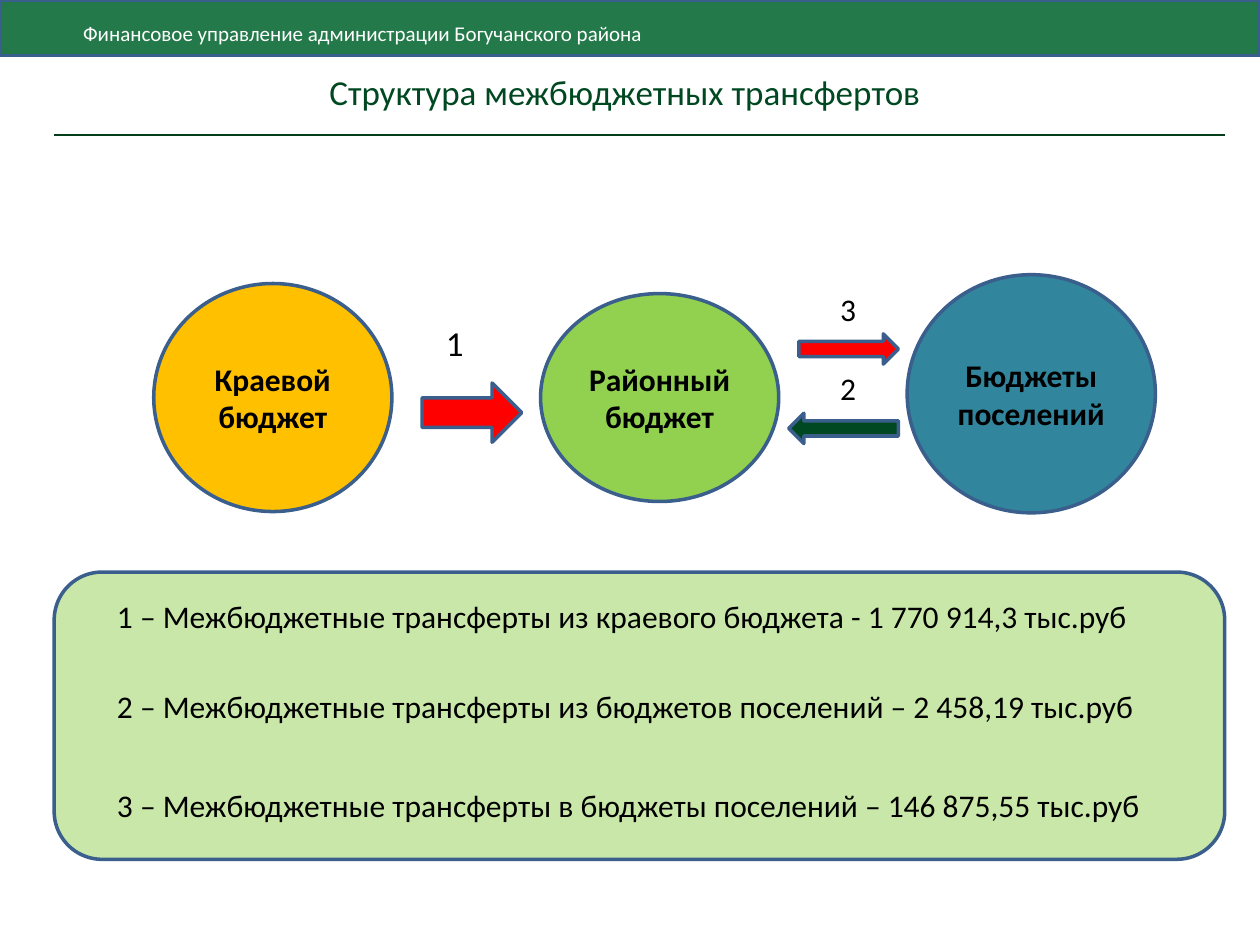
"""Build the slide on the structure of inter-budget transfers."""
from dataclasses import dataclass

import lxml.etree
import pptx
import pptx.dml.color
import pptx.enum.shapes
import pptx.enum.text
import pptx.oxml.ns
import pptx.util

Inches = pptx.util.Inches
Shape = pptx.enum.shapes.MSO_SHAPE
Align = pptx.enum.text.PP_ALIGN
Anchor = pptx.enum.text.MSO_ANCHOR


@dataclass(frozen=True)
class Theme:
    font: str = "Calibri"
    band: str = "00642D"
    outline: str = "3A5F8C"
    rule: str = "003E1C"
    dark_green: str = "004821"
    white: str = "FFFFFF"
    black: str = "000000"
    yellow: str = "FFC000"
    green: str = "92D050"
    teal: str = "31859C"
    red: str = "FF0000"
    header_size: int = 12
    body_size: int = 18
    title_size: int = 20
    outline_width: float = 2
    rule_width: float = 1.25


class SlideBuilder:
    def __init__(self, slide, theme):
        self.slide = slide
        self.theme = theme

    def color(self, value):
        return pptx.dml.color.RGBColor.from_string(value)

    def set_text(self, shape, text, size, color, align=Align.LEFT, bold=False):
        frame = shape.text_frame
        frame.word_wrap = True
        paragraph = frame.paragraphs[0]
        paragraph.text = text
        paragraph.alignment = align
        font = paragraph.font
        font.name = self.theme.font
        font.size = pptx.util.Pt(size)
        font.bold = bold
        font.color.rgb = self.color(color)

    def shape(self, kind, left, top, width, height, fill, opacity=100):
        shape = self.slide.shapes.add_shape(
            kind, Inches(left), Inches(top), Inches(width), Inches(height))
        shape.shadow.inherit = False
        shape.fill.solid()
        shape.fill.fore_color.rgb = self.color(fill)
        shape.line.color.rgb = self.color(self.theme.outline)
        shape.line.width = pptx.util.Pt(self.theme.outline_width)
        if opacity < 100:
            solid_fill = shape._element.spPr.find(pptx.oxml.ns.qn("a:solidFill"))
            alpha = lxml.etree.SubElement(solid_fill[0], pptx.oxml.ns.qn("a:alpha"))
            alpha.set("val", str(opacity * 1000))
        return shape

    def header(self, text):
        band = self.shape(Shape.RECTANGLE, 0, 0, 10, 0.44, self.theme.band, 86)
        self.set_text(band, text, self.theme.header_size, self.theme.white)
        frame = band.text_frame
        frame.vertical_anchor = Anchor.MIDDLE
        frame.margin_left = Inches(0.66)
        frame.margin_top = Inches(0.13)

    def rule(self, left, right, top):
        line = self.slide.shapes.add_connector(
            pptx.enum.shapes.MSO_CONNECTOR.STRAIGHT,
            Inches(left), Inches(top), Inches(right), Inches(top))
        line.line.color.rgb = self.color(self.theme.rule)
        line.line.width = pptx.util.Pt(self.theme.rule_width)
        properties = line._element.spPr
        lxml.etree.SubElement(properties, pptx.oxml.ns.qn("a:effectLst"))

    def text(self, text, left, top, width, height=0.4, size=None, color=None,
             align=Align.LEFT, anchor=Anchor.TOP):
        box = self.slide.shapes.add_textbox(
            Inches(left), Inches(top), Inches(width), Inches(height))
        self.set_text(box, text, size or self.theme.body_size,
                      color or self.theme.black, align)
        box.text_frame.vertical_anchor = anchor

    def budget(self, text, left, top, width, height, fill):
        circle = self.shape(Shape.OVAL, left, top, width, height, fill)
        self.set_text(circle, text, self.theme.body_size, self.theme.black,
                      Align.CENTER, bold=True)
        circle.text_frame.vertical_anchor = Anchor.MIDDLE

    def arrow(self, left, top, width, height, fill, rotation=0):
        arrow = self.shape(Shape.RIGHT_ARROW, left, top, width, height, fill)
        arrow.rotation = rotation


def main():
    presentation = pptx.Presentation()
    presentation.slide_width = Inches(10)
    presentation.slide_height = Inches(7.5)
    slide = presentation.slides.add_slide(presentation.slide_layouts[6])
    theme = Theme()
    builder = SlideBuilder(slide, theme)

    builder.header("Финансовое управление администрации Богучанского района")
    builder.rule(0.43, 9.72, 1.07)
    builder.text("Структура межбюджетных трансфертов", 0.46, 0.3, 9, 0.85,
                 theme.title_size, theme.dark_green, Align.CENTER, Anchor.MIDDLE)

    builder.budget("Краевой бюджет", 1.22, 2.25, 1.89, 1.81, theme.yellow)
    builder.budget("Районный бюджет", 4.29, 2.33, 1.89, 1.65, theme.green)
    builder.budget("Бюджеты поселений", 7.2, 2.18, 1.97, 1.89, theme.teal)

    builder.arrow(3.35, 3.04, 0.79, 0.47, theme.red)
    builder.arrow(6.34, 2.65, 0.79, 0.24, theme.red)
    builder.arrow(6.26, 3.28, 0.87, 0.24, theme.dark_green, rotation=180)
    builder.text("1", 3.44, 2.5, 0.35, 0.43, theme.title_size)
    builder.text("3", 6.57, 2.25, 0.33)
    builder.text("2", 6.57, 2.88, 0.33)

    builder.shape(Shape.ROUNDED_RECTANGLE, 0.43, 4.54, 9.29, 2.28, theme.green, 49)
    legend = (
        (4.69, "1 – Межбюджетные трансферты из краевого бюджета - 1 770 914,3 тыс.руб"),
        (5.4, "2 – Межбюджетные трансферты из бюджетов поселений – 2 458,19 тыс.руб"),
        (6.19, "3 – Межбюджетные трансферты в бюджеты поселений – 146 875,55 тыс.руб"),
    )
    for top, text in legend:
        builder.text(text, 0.83, top, 8.82)

    presentation.save("out.pptx")


if __name__ == "__main__":
    main()
